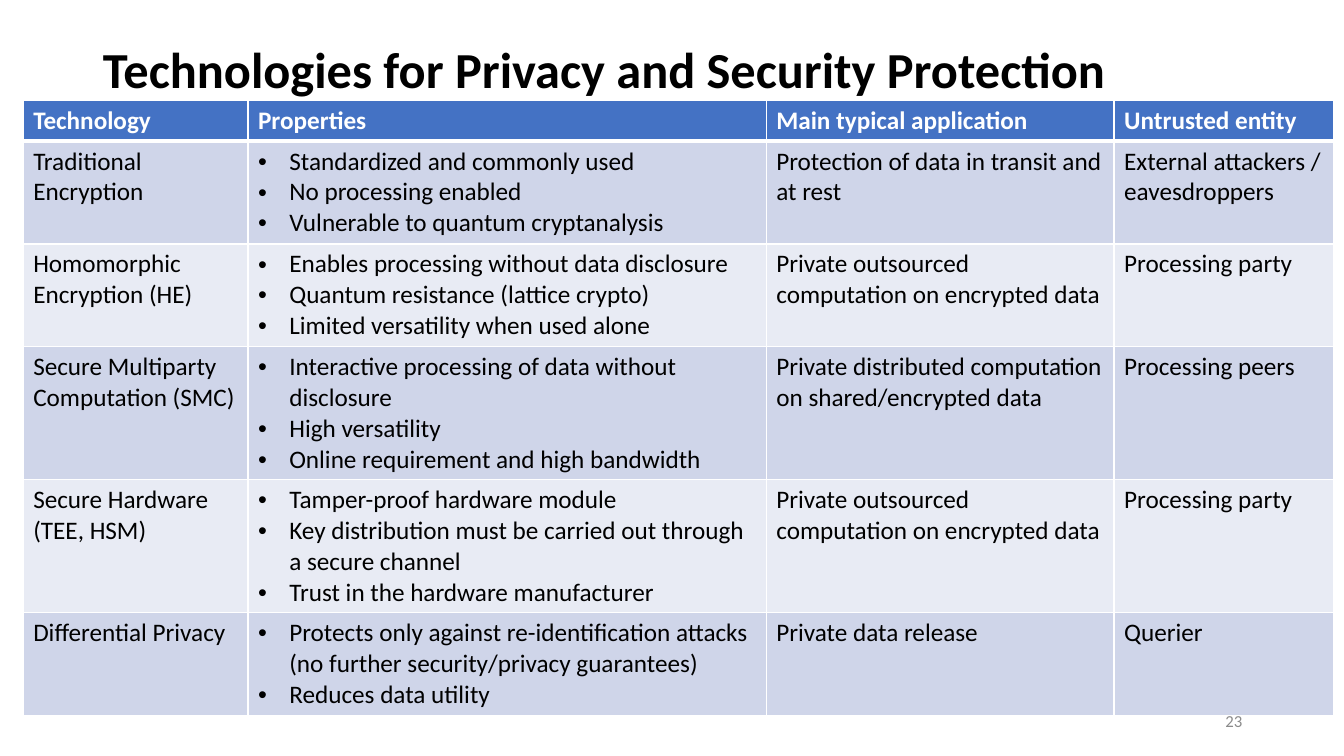
from dataclasses import dataclass

from lxml.etree import SubElement
from pptx import Presentation
from pptx.dml.color import RGBColor
from pptx.enum.text import MSO_ANCHOR, MSO_AUTO_SIZE, PP_ALIGN
from pptx.oxml.ns import qn
from pptx.slide import Slide
from pptx.table import _Cell as Cell
from pptx.text.text import _Paragraph as Paragraph
from pptx.util import Inches, Pt

COLORS = {
    "header": "4472C4",
    "odd_row": "CFD5E9",
    "even_row": "E8EBF4",
    "white": "FFFFFF",
    "black": "000000",
    "gray": "8B8B8B",
}
COLUMN_WIDTHS = [2.23, 5.14, 3.45, 2.18]
HEADER_HEIGHT = 0.4
HEADINGS = ["Technology", "Properties", "Main typical application", "Untrusted entity"]
THIN, THICK = 0.96, 3
BULLET_INDENT = 0.31


@dataclass
class Technology:
    name: str
    properties: list[str]
    application: str
    untrusted: str
    height: float


TECHNOLOGIES = [
    Technology(
        "Traditional Encryption",
        [
            "Standardized and commonly used",
            "No processing enabled",
            "Vulnerable to quantum cryptanalysis",
        ],
        "Protection of data in transit and at rest",
        "External attackers / eavesdroppers",
        1.02,
    ),
    Technology(
        "Homomorphic Encryption (HE)",
        [
            "Enables processing without data disclosure",
            "Quantum resistance (lattice crypto)",
            "Limited versatility when used alone",
        ],
        "Private outsourced computation on encrypted data",
        "Processing party",
        1.02,
    ),
    Technology(
        "Secure Multiparty Computation (SMC)",
        [
            "Interactive processing of data without disclosure",
            "High versatility",
            "Online requirement and high bandwidth",
        ],
        "Private distributed computation on shared/encrypted data",
        "Processing peers",
        1.32,
    ),
    Technology(
        "Secure Hardware (TEE, HSM)",
        [
            "Tamper-proof hardware module",
            "Key distribution must be carried out through a secure channel",
            "Trust in the hardware manufacturer",
        ],
        "Private outsourced computation on encrypted data",
        "Processing party",
        1.32,
    ),
    Technology(
        "Differential Privacy",
        [
            "Protects only against re-identification attacks "
            "(no further security/privacy guarantees)",
            "Reduces data utility",
        ],
        "Private data release",
        "Querier",
        1.02,
    ),
]


def format_runs(paragraph: Paragraph, size: float, color: str, bold: bool = False) -> None:
    for run in paragraph.runs:
        run.font.name = "Calibri"
        run.font.size = Pt(size)
        run.font.bold = bold
        run.font.color.rgb = RGBColor.from_string(COLORS[color])


def add_bullet(paragraph: Paragraph) -> None:
    properties = paragraph._p.get_or_add_pPr()
    properties.set("marL", str(Inches(BULLET_INDENT)))
    properties.set("indent", str(-Inches(BULLET_INDENT)))
    SubElement(properties, qn("a:buFont"), typeface="Arial")
    SubElement(properties, qn("a:buChar"), char="•")


def add_borders(cell: Cell, top: float, bottom: float) -> None:
    properties = cell._tc.get_or_add_tcPr()
    for side, width in zip("LRTB", (THIN, THIN, top, bottom)):
        line = SubElement(properties, qn(f"a:ln{side}"), w=str(Pt(width)))
        fill = SubElement(line, qn("a:solidFill"))
        SubElement(fill, qn("a:srgbClr"), val=COLORS["white"])


def fill_cell(cell: Cell, lines: list[str], row: int, bulleted: bool) -> None:
    is_header = row == 0
    add_borders(cell, THICK if row == 1 else THIN, THICK if is_header else THIN)
    background = "header" if is_header else "odd_row" if row % 2 else "even_row"
    cell.fill.solid()
    cell.fill.fore_color.rgb = RGBColor.from_string(COLORS[background])
    cell.text_frame.text = "\n".join(lines)
    for paragraph in cell.text_frame.paragraphs:
        if bulleted:
            add_bullet(paragraph)
        format_runs(paragraph, 18, "white" if is_header else "black", is_header)


def add_title(slide: Slide) -> None:
    title = slide.shapes.title
    title.left, title.top = Inches(0.92), Inches(-0.01)
    title.width, title.height = Inches(11.5), Inches(1.45)
    frame = title.text_frame
    frame.text = "Technologies for Privacy and Security Protection"
    frame.word_wrap = True
    frame.auto_size = MSO_AUTO_SIZE.NONE
    frame.vertical_anchor = MSO_ANCHOR.MIDDLE
    paragraph = frame.paragraphs[0]
    paragraph.alignment = PP_ALIGN.LEFT
    paragraph.line_spacing = 0.9
    format_runs(paragraph, 36, "black", True)


def add_page_number(slide: Slide) -> None:
    box = slide.shapes.add_textbox(Inches(9.42), Inches(6.95), Inches(3), Inches(0.4))
    frame = box.text_frame
    frame.text = "23"
    frame.word_wrap = True
    frame.vertical_anchor = MSO_ANCHOR.MIDDLE
    frame.paragraphs[0].alignment = PP_ALIGN.RIGHT
    format_runs(frame.paragraphs[0], 12, "gray")


def add_technology_table(slide: Slide) -> None:
    heights = [HEADER_HEIGHT] + [technology.height for technology in TECHNOLOGIES]
    table = slide.shapes.add_table(
        len(heights), len(COLUMN_WIDTHS), Inches(0.23), Inches(1),
        Inches(sum(COLUMN_WIDTHS)), Inches(sum(heights)),
    ).table
    for column, width in zip(table.columns, COLUMN_WIDTHS):
        column.width = Inches(width)
    for table_row, height in zip(table.rows, heights):
        table_row.height = Inches(height)

    contents = [[[heading] for heading in HEADINGS]] + [
        [[item.name], item.properties, [item.application], [item.untrusted]]
        for item in TECHNOLOGIES
    ]
    for row, cells in enumerate(contents):
        for column, lines in enumerate(cells):
            fill_cell(table.cell(row, column), lines, row, row > 0 and column == 1)


def main() -> None:
    presentation = Presentation()
    presentation.slide_width = Inches(13.33)
    presentation.slide_height = Inches(7.5)
    slide = presentation.slides.add_slide(presentation.slide_layouts[5])
    add_title(slide)
    add_page_number(slide)
    add_technology_table(slide)
    presentation.save("out.pptx")


if __name__ == "__main__":
    main()
